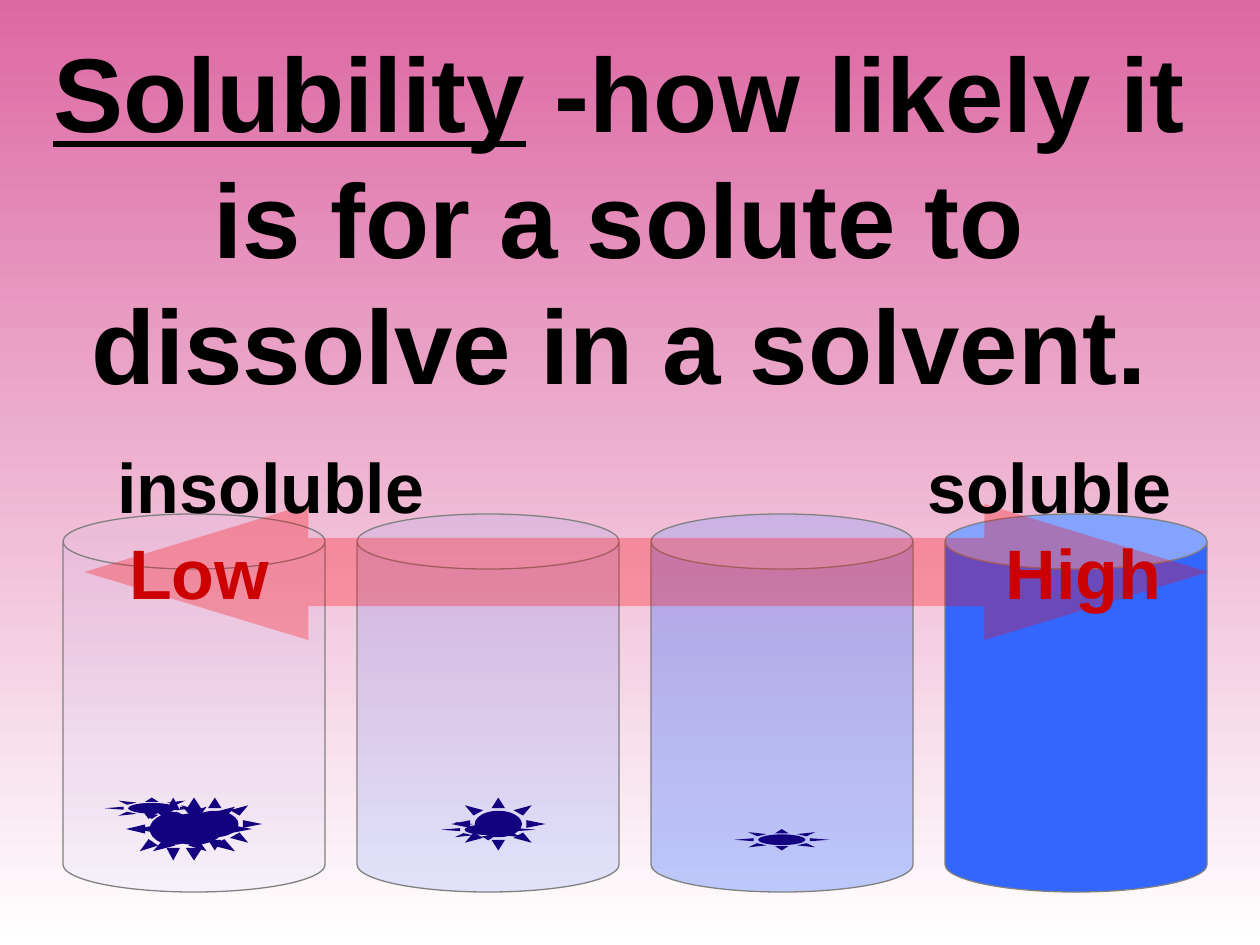
from dataclasses import dataclass

from lxml.etree import SubElement
from pptx import Presentation
from pptx.dml.color import RGBColor
from pptx.enum.shapes import MSO_SHAPE as Shape
from pptx.enum.text import MSO_ANCHOR as Anchor, MSO_AUTO_SIZE as AutoSize, PP_ALIGN as Align
from pptx.oxml.ns import qn
from pptx.util import Inches, Pt


@dataclass(frozen=True)
class Theme:
    font: str = "Arial"
    title_size: int = 60
    label_size: int = 40
    line_pitch: float = 1.2
    text: str = "000000"
    scale_text: str = "CC0000"
    sky_top: str = "DD69A3"
    sky_bottom: str = "FFFFFF"
    solution: str = "3366FF"
    outline: str = "808080"
    arrow: str = "FF0000"
    solute: str = "13017F"


class SlideBuilder:
    def __init__(self, slide, theme):
        self.slide = slide
        self.theme = theme

    def background(self):
        fill = self.slide.background.fill
        fill.gradient()
        fill.gradient_angle = 270
        colors = (self.theme.sky_top, self.theme.sky_bottom)
        for stop, color in zip(fill.gradient_stops, colors):
            stop.color.rgb = RGBColor.from_string(color)

    def add_text(self, shape, runs, size, color):
        """Fill a shape with one centred paragraph of (text, underlined) runs."""
        frame = shape.text_frame
        frame.word_wrap = True
        frame.auto_size = AutoSize.NONE
        frame.vertical_anchor = Anchor.TOP
        paragraph = frame.paragraphs[0]
        paragraph.alignment = Align.CENTER
        paragraph.line_spacing = Pt(size * self.theme.line_pitch)
        for text, underlined in runs:
            run = paragraph.add_run()
            run.text = text
            font = run.font
            font.name, font.size, font.bold = self.theme.font, Pt(size), True
            font.underline = underlined
            font.color.rgb = RGBColor.from_string(color)

    def title(self, left, top, width, height, runs):
        title = self.slide.shapes.title
        title.left, title.top = Inches(left), Inches(top)
        title.width, title.height = Inches(width), Inches(height)
        self.add_text(title, runs, self.theme.title_size, self.theme.text)

    def label(self, center, top, text, color):
        width = 3
        box = self.slide.shapes.add_textbox(
            Inches(center - width / 2), Inches(top), Inches(width), Inches(0.75))
        self.add_text(box, [(text, False)], self.theme.label_size, color)

    def shape(self, kind, left, top, width, height, color,
              opacity=100, outline=None, adjustments=()):
        shape = self.slide.shapes.add_shape(
            kind, Inches(left), Inches(top), Inches(width), Inches(height))
        shape.shadow.inherit = False
        for index, value in enumerate(adjustments):
            shape.adjustments[index] = value
        shape.fill.solid()
        shape.fill.fore_color.rgb = RGBColor.from_string(color)
        if opacity < 100:
            fill_color = shape._element.spPr.find(qn("a:solidFill"))[0]
            SubElement(fill_color, qn("a:alpha")).set("val", str(opacity * 1000))
        if outline:
            shape.line.color.rgb = RGBColor.from_string(outline)
            shape.line.width = Pt(0.75)
        else:
            shape.line.fill.background()


def main():
    presentation = Presentation()
    presentation.slide_width, presentation.slide_height = Inches(10), Inches(7.5)
    theme = Theme()
    builder = SlideBuilder(
        presentation.slides.add_slide(presentation.slide_layouts[5]), theme)

    # Background and definition
    builder.background()
    builder.title(0.25, 0.17, 9.33, 4.1, [
        ("Solubility", True),
        (" -how likely it is for a solute to dissolve in a solvent.", False)])

    # Beakers, from insoluble to fully dissolved
    first_beaker, last_beaker = 0.5, 7.5
    opacities = (4, 14, 32, 100)
    step = (last_beaker - first_beaker) / (len(opacities) - 1)
    for index, opacity in enumerate(opacities):
        builder.shape(Shape.CAN, first_beaker + index * step, 4.08, 2.08, 3,
                      theme.solution, opacity, theme.outline, [0.21])

    # Solubility scale
    builder.shape(Shape.LEFT_RIGHT_ARROW, 0.67, 4, 8.92, 1.08, theme.arrow,
                  opacity=28, adjustments=[0.5, 1.646])
    for center, top, text, color in (
            (2.15, 3.47, "insoluble", theme.text),
            (8.33, 3.47, "soluble", theme.text),
            (1.58, 4.15, "Low", theme.scale_text),
            (8.6, 4.15, "High", theme.scale_text)):
        builder.label(center, top, text, color)

    # Undissolved solute
    for left, top, width, height in (
            (0.83, 6.33, 0.75, 0.17),
            (1.33, 6.33, 0.75, 0.42),
            (1, 6.33, 0.75, 0.5),
            (1.08, 6.33, 0.92, 0.5),
            (3.5, 6.5, 0.75, 0.17),
            (3.58, 6.33, 0.75, 0.42),
            (5.83, 6.58, 0.75, 0.17)):
        builder.shape(Shape.SUN, left, top, width, height, theme.solute)

    presentation.save("out.pptx")


if __name__ == "__main__":
    main()
